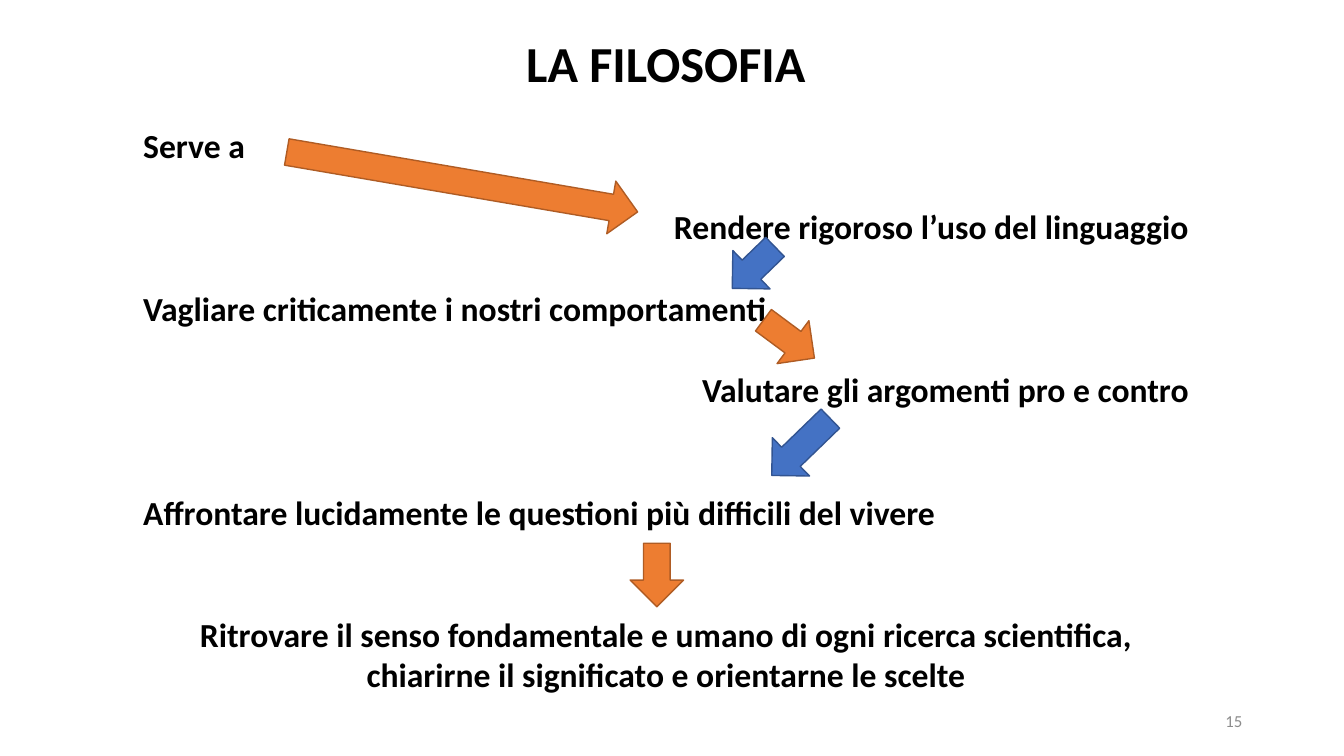
from lxml import etree
from pptx import Presentation
from pptx.dml.color import RGBColor
from pptx.enum.shapes import MSO_SHAPE
from pptx.enum.text import MSO_ANCHOR, MSO_AUTO_SIZE, PP_ALIGN
from pptx.oxml.ns import qn
from pptx.util import Inches, Pt

DOWN_ARROW = MSO_SHAPE.DOWN_ARROW
TOP, MIDDLE = MSO_ANCHOR.TOP, MSO_ANCHOR.MIDDLE
NO_AUTOFIT = MSO_AUTO_SIZE.NONE
LEFT, CENTER, RIGHT = PP_ALIGN.LEFT, PP_ALIGN.CENTER, PP_ALIGN.RIGHT

COLORS = {
    "text": "000000",
    "number": "8C8C8C",
    "orange": "ED7D31",
    "orange_line": "AF5C24",
    "blue": "4472C4",
    "blue_line": "325491",
}
FONTS = {
    "title": {"name": "Calibri", "size": Pt(36), "bold": True},
    "body": {"name": "Calibri", "size": Pt(24), "bold": True},
    "number": {"name": "Calibri", "size": Pt(12), "bold": False},
}
LINE_GAP = 29.3

PURPOSES = [
    ("Serve a", LEFT, 0),
    ("Rendere rigoroso l’uso del linguaggio", RIGHT, 1),
    ("Vagliare criticamente i nostri comportamenti", LEFT, 1),
    ("Valutare gli argomenti pro e contro", RIGHT, 1),
    ("Affrontare lucidamente le questioni più difficili del vivere", LEFT, 2),
    ("Ritrovare il senso fondamentale e umano di ogni ricerca scientifica, "
     "chiarirne il significato e orientarne le scelte", CENTER, 2),
]
ARROW_WIDTH = 0.53
ARROWS = [
    (3.0, -0.23, 3.53, 279.7, "orange"),
    (5.89, 2.09, 0.59, 45.9, "blue"),
    (6.24, 2.78, 0.63, 306.6, "orange"),
    (6.36, 3.76, 0.81, 45.9, "blue"),
    (4.93, 5.12, 0.63, 0, "orange"),
]


def rgb(name):
    return RGBColor.from_string(COLORS[name])


def place(sp, box):
    for attr, value in zip(("left", "top", "width", "height"), box):
        setattr(sp, attr, Inches(value))


def set_frame(tf, anchor):
    frame = {"word_wrap": True, "auto_size": NO_AUTOFIT, "vertical_anchor": anchor}
    for attr, value in frame.items():
        setattr(tf, attr, value)


def write(p, text, style, color, align, gap=0):
    layout = {"alignment": align, "line_spacing": 1.0,
              "space_before": Pt(gap), "space_after": Pt(0)}
    for attr, value in layout.items():
        setattr(p, attr, value)
    r = p.add_run()
    r.text = text
    for attr, value in FONTS[style].items():
        setattr(r.font, attr, value)
    r.font.color.rgb = rgb(color)


def add_title(slide, box):
    sp = slide.shapes.title
    place(sp, box)
    set_frame(sp.text_frame, TOP)
    write(sp.text_frame.paragraphs[0], "LA FILOSOFIA", "title", "text", CENTER)


def add_purposes(slide, box):
    sp = slide.placeholders[1]
    place(sp, box)
    tf = sp.text_frame
    set_frame(tf, TOP)
    for i, (text, align, gaps) in enumerate(PURPOSES):
        p = tf.add_paragraph() if i else tf.paragraphs[0]
        write(p, text, "body", "text", align, gaps * LINE_GAP)
        pPr = p._p.get_or_add_pPr()
        pPr.set("marL", "0")
        pPr.set("indent", "0")
        etree.SubElement(pPr, qn("a:buNone"))


def add_arrows(slide, box):
    for x, y, length, angle, color in ARROWS:
        sp = slide.shapes.add_shape(
            DOWN_ARROW, Inches(box[0] + x), Inches(box[1] + y),
            Inches(ARROW_WIDTH), Inches(length))
        sp.rotation = angle
        sp.shadow.inherit = False
        sp.fill.solid()
        sp.fill.fore_color.rgb = rgb(color)
        sp.line.color.rgb = rgb(color + "_line")
        sp.line.width = Pt(1)


def add_number(slide, box):
    sp = slide.shapes.add_textbox(*map(Inches, box))
    set_frame(sp.text_frame, MIDDLE)
    write(sp.text_frame.paragraphs[0], "15", "number", "number", RIGHT)


def main():
    prs = Presentation()
    prs.slide_width = Inches(13.33)
    prs.slide_height = Inches(7.5)
    slide = prs.slides.add_slide(prs.slide_layouts[1])
    left, top, width, height = 1.32, 0.27, 10.57, 6.66
    title_height = 0.92
    add_number(slide, (9.42, 6.95, 3, 0.4))
    add_title(slide, (left, top, width, title_height))
    add_purposes(slide, (left, top + title_height, width, height - title_height))
    add_arrows(slide, (left, top, width, height))
    prs.save("out.pptx")


if __name__ == "__main__":
    main()
